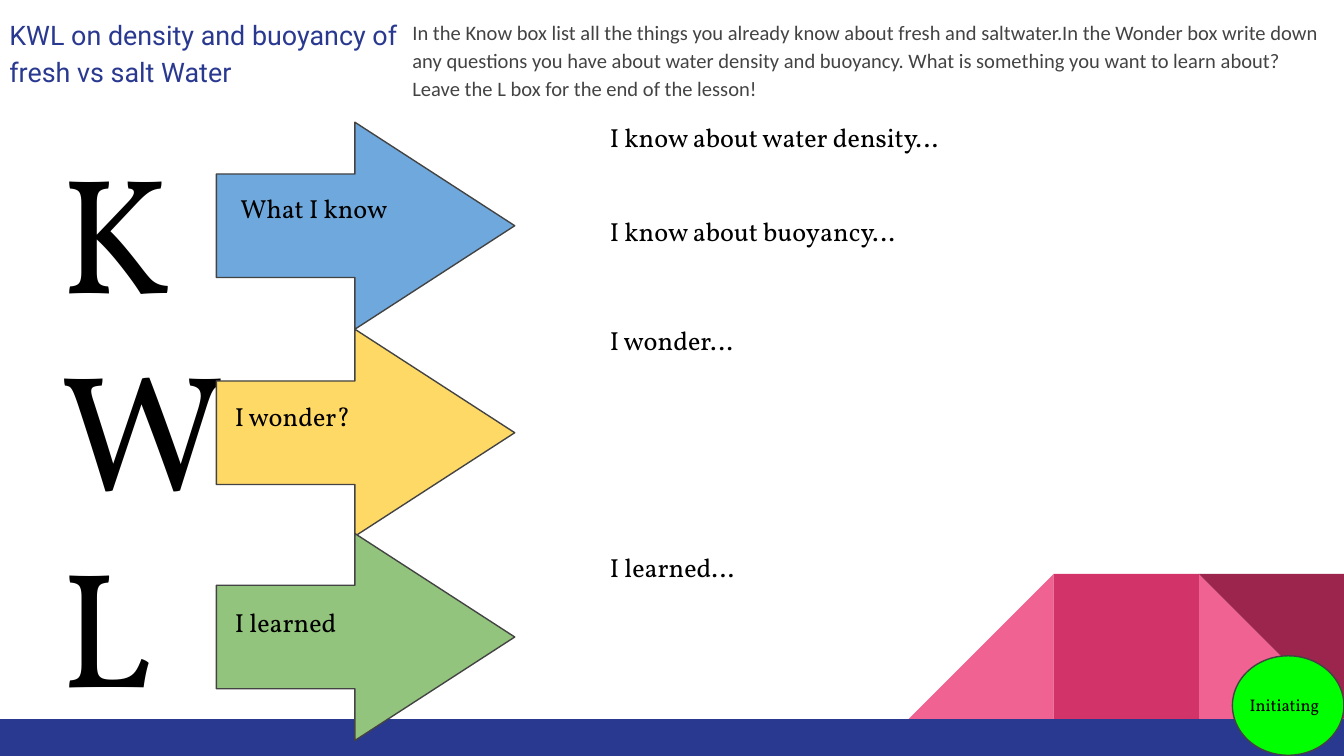
from pptx import Presentation
from pptx.dml.color import RGBColor
from pptx.enum.shapes import MSO_SHAPE
from pptx.enum.text import MSO_ANCHOR, MSO_AUTO_SIZE, PP_ALIGN
from pptx.util import Inches, Pt

COLORS = {
    "navy": "2A3990", "pink": "F06292", "rose": "D23369", "wine": "9C254D",
    "blue": "6FA8DC", "gold": "FFD966", "leaf": "93C47D", "lime": "00FF00",
    "gray": "434343", "black": "000000",
}
SERIF = "Vollkorn"


def color(name):
    return RGBColor.from_string(COLORS[name])


def add_form(slide, kind, box, fill, line=None):
    form = slide.shapes.add_shape(kind, *map(Inches, box))
    form.shadow.inherit = False
    form.fill.solid()
    form.fill.fore_color.rgb = color(fill)
    if line:
        form.line.color.rgb = color(line)
        form.line.width = Pt(0.75)
    else:
        form.line.fill.background()
    return form


def set_text(shape, lines, size, font=SERIF, ink="black", gap=0, lead=None):
    """Fill the shape with one paragraph a line, gap points apart."""
    frame = shape.text_frame
    frame.word_wrap = True
    frame.auto_size = MSO_AUTO_SIZE.NONE
    frame.vertical_anchor = MSO_ANCHOR.TOP
    frame.margin_left = frame.margin_right = Inches(0.1)
    frame.margin_top = frame.margin_bottom = Inches(0.1)
    frame.text = "\n".join(lines)
    for row, para in enumerate(frame.paragraphs):
        para.alignment = PP_ALIGN.LEFT
        para.space_before = Pt(gap if row else 0)
        if lead:
            para.line_spacing = lead
        para.font.size = Pt(size)
        para.font.name = font
        para.font.bold = False
        para.font.color.rgb = color(ink)


def add_text(slide, box, lines, size, **style):
    set_text(slide.shapes.add_textbox(*map(Inches, box)), lines, size, **style)


def add_decor(slide, left, top, side):
    """Row of folded squares that ends on the floor bar."""
    corner = MSO_SHAPE.RIGHT_TRIANGLE
    mid, last = left + side, left + 2 * side
    add_form(slide, corner, (last, top, side, side), "pink")
    slope = add_form(slide, corner, (left, top, side, side), "pink")
    slope.rotation = 270
    add_form(slide, MSO_SHAPE.RECTANGLE, (mid, top, side, side), "rose")
    fold = add_form(slide, corner, (last, top, side, side), "wine")
    fold.rotation = 180
    add_form(slide, MSO_SHAPE.RECTANGLE, (0, top + side, 10, 0.28), "navy")


def add_head(slide, left, top, width, height):
    title = slide.shapes.title
    title.left, title.top = Inches(left), Inches(top)
    title.width, title.height = Inches(3.11), Inches(height)
    set_text(title, ["KWL on density and buoyancy of fresh vs salt Water"],
             14.4, font="Roboto", ink="navy", lead=1.15)
    guide = (
        "In the Know box list all the things you already know about fresh and "
        "saltwater.In the Wonder box write down any questions you have about "
        "water density and buoyancy. What is something you want to learn "
        "about?  Leave the L box for the end of the lesson!"
    )
    add_text(slide, (left + 3, top + 0.02, width - 3, height), [guide], 11,
             font="Calibri", ink="gray", lead=1.15)


def add_arrow(slide, left, top, fill, label, shift, drop):
    arrow = add_form(slide, MSO_SHAPE.RIGHT_ARROW, (left, top, 2.22, 1.54),
                     fill, "gray")
    arrow.adjustments[0] = 0.5
    arrow.adjustments[1] = 0.772
    add_text(slide, (left + shift, top + drop, 1.48, 0.66), [label], 14)


def add_badge(slide, left, top, width, height):
    add_form(slide, MSO_SHAPE.OVAL, (left, top, width, height), "lime", "gray")
    add_text(slide, (left + 0.03, top + 0.19, width, 0.3), ["Initiating"], 9)


def main():
    deck = Presentation()
    deck.slide_width = Inches(10)
    deck.slide_height = deck.slide_width * 9 // 16
    slide = deck.slides.add_slide(deck.slide_layouts[5])
    add_decor(slide, 6.76, 4.27, 1.08)
    add_head(slide, -0.03, 0, 10.03, 0.84)
    add_text(slide, (0.35, 0.86, 2.37, 4.55), "KWL", 88)

    rows = [
        (0.91, "blue", "What I know", 0.08, 0.42, 0.8,
         ["I know about water density…", "I know about buoyancy…"]),
        (2.45, "gold", "I wonder?", 0.04, 0.43, 2.31, ["I wonder…"]),
        (3.97, "leaf", "I learned", 0.04, 0.44, 4, ["I learned…"]),
    ]
    for top, fill, label, shift, drop, start, lines in rows:
        add_arrow(slide, 1.61, top, fill, label, shift, drop)
        add_text(slide, (4.44, start, 5.45, 1.65), lines, 14, gap=33.6)
    add_badge(slide, 9.17, 4.88, 0.83, 0.74)
    deck.save("out.pptx")


if __name__ == "__main__":
    main()
